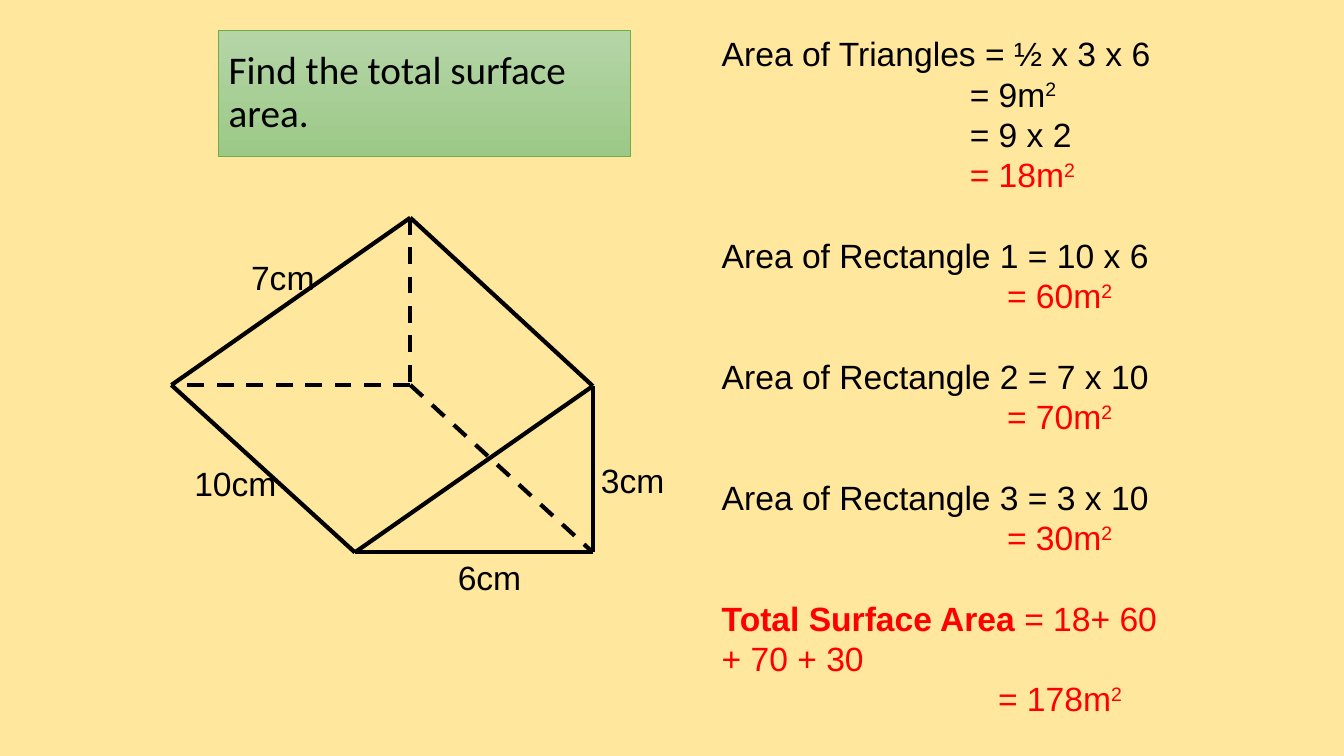
from pptx import Presentation, util as u
from pptx.dml.color import RGBColor
from pptx.enum import dml, shapes, text
from pptx.oxml.ns import qn
from lxml import etree

BLACK, RED = "000000", "FF0000"

# Corners of the prism
TOP, LEFT, BACK = (4.07, 2.16), (1.7, 3.82), (4.07, 3.82)
PEAK, FRONT, RIGHT = (5.88, 3.83), (3.52, 5.48), (5.88, 5.48)
SOLID = [(PEAK, RIGHT), (RIGHT, FRONT), (FRONT, PEAK),
         (TOP, LEFT), (LEFT, FRONT), (TOP, PEAK)]
HIDDEN = [(TOP, BACK), (BACK, LEFT), (BACK, RIGHT)]

LABELS = [("6cm", 4.07, 5.48), ("3cm", 5.49, 4.51),
          ("10cm", 1.55, 4.54), ("7cm", 2.02, 2.5)]

# Each block of working: lines of (indent, runs); a run is (text, format)
SUM, RED_RUN, UP = {}, {"color": RED}, {"color": RED, "up": True}


def result(value, indent=2.83):
    return indent, [(f"= {value}m", RED_RUN), ("2", UP)]


def side(num, product, value):
    return [(0, [(f"Area of Rectangle {num} = {product}", SUM)]), result(value)]


BLOCKS = [
    [(0, [("Area of Triangles = ½ x 3 x 6", SUM)]),
     (2.46, [("= 9m", SUM), ("2", {"up": True})]),
     (2.46, [("= 9 x 2", SUM)]),
     result(18, 2.46)],
    side(1, "10 x 6", 60),
    side(2, "7 x 10", 70),
    side(3, "3 x 10", 30),
    [(0, [("Total Surface Area ", {"color": RED, "bold": True}),
          ("= 18+ 60 + 70 + 30", RED_RUN)]),
     result(178, 2.74)],
]


def rgb(code):
    return RGBColor.from_string(code)


def add_run(para, words, size=24, font="Arial", color=BLACK, bold=False, up=False):
    run = para.add_run()
    run.text = words
    run.font.size, run.font.name, run.font.bold = u.Pt(size), font, bold
    run.font.color.rgb = rgb(color)
    if up:
        run.font._element.set("baseline", "30000")


def add_box(slide, left, top, width, height):
    box = slide.shapes.add_textbox(*map(u.Inches, (left, top, width, height)))
    box.text_frame.word_wrap = True
    return box.text_frame


def add_edge(slide, start, end, dashed=False):
    edge = slide.shapes.add_connector(
        shapes.MSO_CONNECTOR.STRAIGHT, *map(u.Inches, start + end))
    edge.line.color.rgb = rgb(BLACK)
    edge.line.width = u.Pt(3)
    if dashed:
        edge.line.dash_style = dml.MSO_LINE.DASH
    etree.SubElement(edge._element.spPr, qn("a:effectLst"))


def add_label(slide, words, left, top):
    para = add_box(slide, left, top, 1.57, 0.51).paragraphs[0]
    para.alignment = text.PP_ALIGN.CENTER
    add_run(para, words)


def add_title(slide, words):
    box = slide.shapes.add_shape(
        shapes.MSO_SHAPE.RECTANGLE, *map(u.Inches, (2.17, 0.3, 4.08, 1.25)))
    box.shadow.inherit = False
    box.fill.gradient()
    box.fill.gradient_angle = 270
    for stop, color in zip(box.fill.gradient_stops, ("B5D5A7", "9CC987")):
        stop.color.rgb = rgb(color)
    for stop, place in zip(box.fill.gradient_stops, (0, 1)):
        stop.position = place
    box.line.color.rgb = rgb("70AD47")
    box.line.width = u.Pt(0.5)
    frame = box.text_frame
    frame.word_wrap = True
    frame.vertical_anchor = text.MSO_ANCHOR.MIDDLE
    para = frame.paragraphs[0]
    para.alignment = text.PP_ALIGN.LEFT
    para.line_spacing = 0.9
    add_run(para, words, size=28, font="Calibri")


def add_working(slide):
    frame = add_box(slide, 7.06, 0.28, 4.61, 6.97)
    pitch = u.Pt(28.8)
    for b, block in enumerate(BLOCKS):
        for n, (indent, runs) in enumerate(block):
            first = b == n == 0
            para = frame.paragraphs[0] if first else frame.add_paragraph()
            para.line_spacing = pitch
            if n == 0 and b > 0:
                para.space_before = pitch
            if indent:
                para._p.get_or_add_pPr().set("marL", str(u.Inches(indent)))
            for words, style in runs:
                add_run(para, words, **style)


def main():
    deck = Presentation()
    deck.slide_width, deck.slide_height = u.Inches(13.33), u.Inches(7.5)
    slide = deck.slides.add_slide(deck.slide_layouts[6])
    slide.background.fill.solid()
    slide.background.fill.fore_color.rgb = rgb("FFE79E")
    for start, end in SOLID:
        add_edge(slide, start, end)
    for start, end in HIDDEN:
        add_edge(slide, start, end, dashed=True)
    for label in LABELS:
        add_label(slide, *label)
    add_working(slide)
    add_title(slide, "Find the total surface area.")
    deck.save("out.pptx")


if __name__ == "__main__":
    main()
